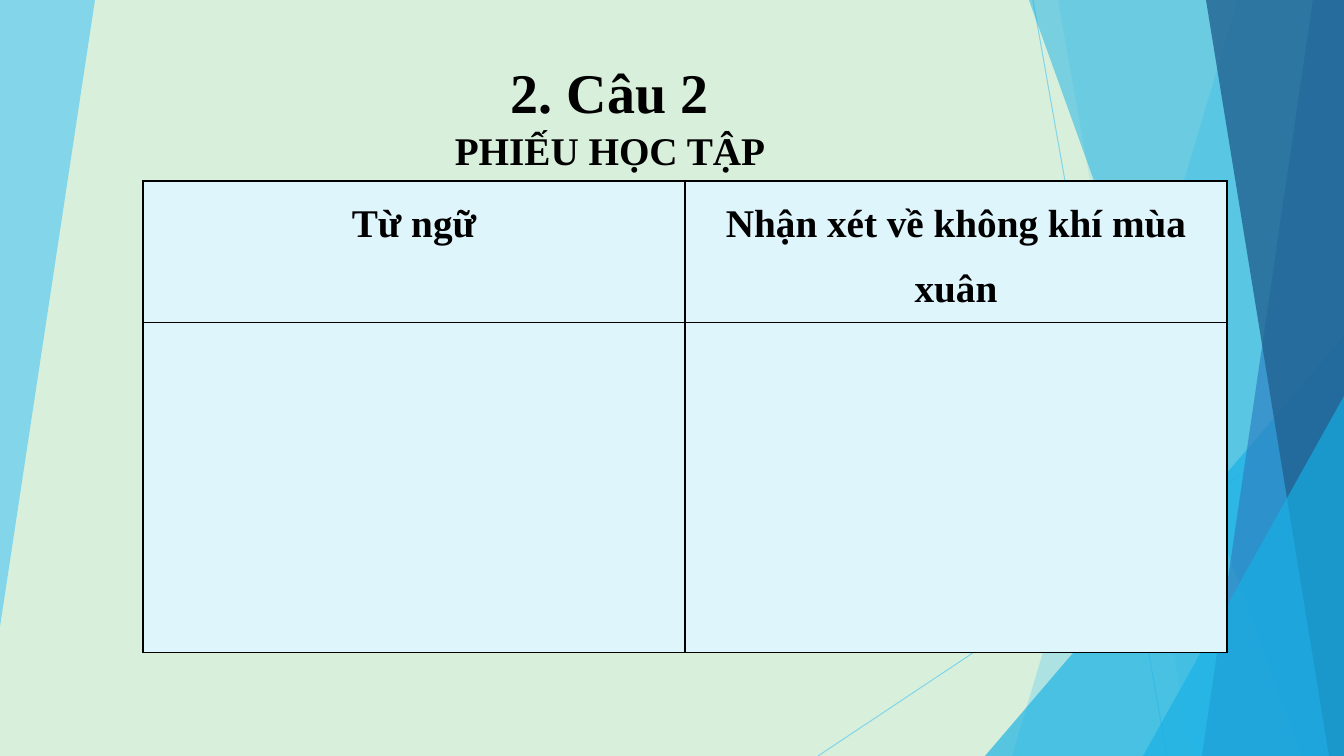
from lxml import etree
from pptx import Presentation
from pptx import util as u
from pptx.dml.color import RGBColor
from pptx.enum import shapes, text
from pptx.oxml.ns import qn

WIDTH, HEIGHT = 1344, 756
FONT = "Times New Roman"
SKY, CYAN, BLUE, NAVY = "5FCBEF", "17B0E4", "2E83C3", "226292"
BLACK, MINT, PALE = "000000", "D8F0DB", "DFF5FC"


def px(length):
    return u.Emu(round(length * 914400 / 100.8))


def colour(value):
    return RGBColor.from_string(value)


def set_alpha(fill_xml, percent):
    rgb = fill_xml.find(".//" + qn("a:srgbClr"))
    etree.SubElement(rgb, qn("a:alpha"), val=str(percent * 1000))


def paint(facet, value, percent):
    facet.shadow.inherit = False
    facet.fill.solid()
    facet.fill.fore_color.rgb = colour(value)
    set_alpha(facet._element.spPr.find(qn("a:solidFill")), percent)
    facet.line.fill.background()


def add_facet(slide, points, value, percent):
    corners = [(px(x), px(y)) for x, y in points]
    outline = slide.shapes.build_freeform(*corners[0], scale=1.0)
    outline.add_line_segments(corners[1:], close=True)
    paint(outline.convert_to_shape(), value, percent)


def add_band(slide, box, top, bottom, value, percent):
    left, y, width, height = box
    right, base = left + width, y + height
    add_facet(slide, [(top, y), (right, y), (right, base), (bottom, base)], value, percent)


def add_corner(slide, box, left, top):
    x, y, width, height = box
    corner = slide.shapes.add_shape(
        shapes.MSO_SHAPE.ISOSCELES_TRIANGLE,
        px(left), px(top), px(x + width - left), px(y + height - top))
    corner.adjustments[0] = 1
    paint(corner, CYAN, 66)


def add_ray(slide, start, end):
    ray = slide.shapes.add_connector(
        shapes.MSO_CONNECTOR.STRAIGHT, *map(px, start + end))
    ray.line.width = u.Pt(0.75)
    ray.line.color.rgb = colour(SKY)
    set_alpha(ray.line._ln, 70)
    etree.SubElement(ray._element.spPr, qn("a:effectLst"))


def add_backdrop(slide, box):
    x, y, width, height = box
    right, base = x + width, y + height
    slide.background.fill.solid()
    slide.background.fill.fore_color.rgb = colour(MINT)
    add_facet(slide, [(x, y), (x + 95, y), (x, y + 627)], SKY, 70)
    add_ray(slide, (right - 311, y), (right - 177, base))
    add_ray(slide, (right, y + 406), (right - 526, base))
    add_band(slide, box, 1238, 1012, SKY, 36)
    add_band(slide, box, 1058, 1192, SKY, 20)
    add_corner(slide, box, 985, 336)
    add_band(slide, box, 1029, 1301, CYAN, 50)
    add_band(slide, box, 1313, 1202, BLUE, 70)
    add_band(slide, box, 1206, 1329, NAVY, 80)
    add_corner(slide, box, 1143, 396)


def write(paragraph, words, size, align, spacing):
    paragraph.alignment = align
    paragraph.line_spacing = spacing
    run = paragraph.add_run()
    run.text = words
    run.font.name = FONT
    run.font.size = u.Pt(size)
    run.font.bold = True
    run.font.color.rgb = colour(BLACK)


def add_heading(slide, box, words, size, align, spacing):
    heading = slide.shapes.add_textbox(*map(px, box)).text_frame
    heading.word_wrap = True
    write(heading.paragraphs[0], words, size, align, spacing)


def style_cell(cell):
    properties = cell._tc.get_or_add_tcPr()
    for side in ("lnL", "lnR", "lnT", "lnB"):
        border = etree.SubElement(properties, qn("a:" + side), w=str(u.Pt(1)))
        solid = etree.SubElement(border, qn("a:solidFill"))
        etree.SubElement(solid, qn("a:srgbClr"), val=BLACK)
    cell.fill.solid()
    cell.fill.fore_color.rgb = colour(PALE)
    cell.margin_left = cell.margin_right = px(7)
    cell.margin_top = cell.margin_bottom = 0


def add_worksheet(slide, box, titles, heights):
    worksheet = slide.shapes.add_table(len(heights), len(titles), *map(px, box)).table
    worksheet.first_row = worksheet.horz_banding = False
    for row, height in zip(worksheet.rows, heights):
        row.height = px(height)
    for cell in worksheet.iter_cells():
        style_cell(cell)
    for column, title in enumerate(titles):
        header = worksheet.cell(0, column).text_frame.paragraphs[0]
        write(header, title, 28, text.PP_ALIGN.CENTER, 1.5)


def main():
    deck = Presentation()
    deck.slide_width, deck.slide_height = px(WIDTH), px(HEIGHT)
    slide = deck.slides.add_slide(deck.slide_layouts[6])
    add_backdrop(slide, (0, 0, WIDTH, HEIGHT))
    add_heading(slide, (501, 19, 353, 100), "2. Câu 2", 40, text.PP_ALIGN.JUSTIFY, 1.5)
    add_heading(slide, (445, 121, 466, 57), "PHIẾU HỌC TẬP", 28, text.PP_ALIGN.LEFT, 1.0)
    add_worksheet(slide, (143, 181, 1084, 471),
                  ["Từ ngữ", "Nhận xét về không khí mùa xuân"], [141, 330])
    deck.save("out.pptx")


if __name__ == "__main__":
    main()
